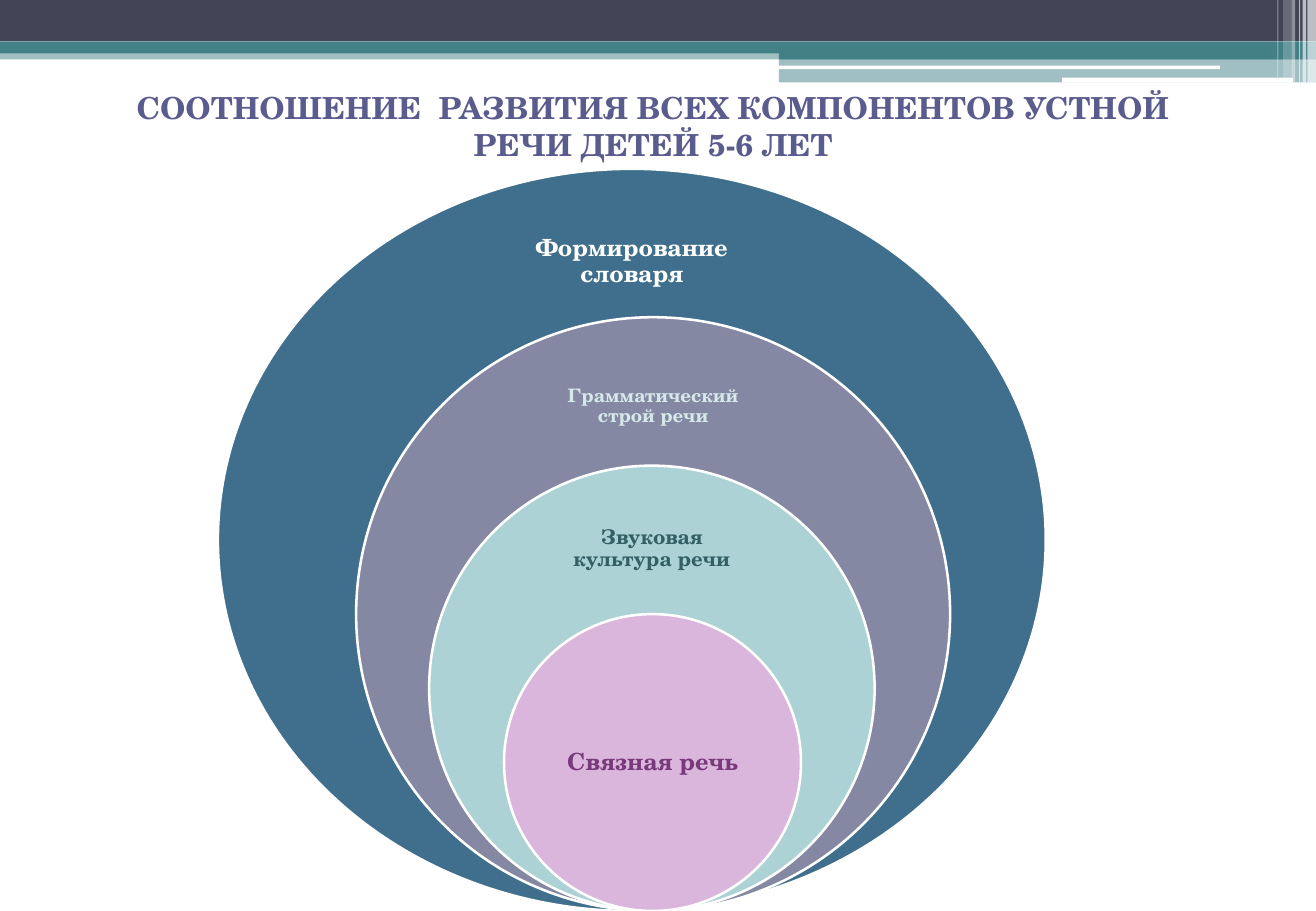
from lxml.etree import SubElement
from pptx import Presentation
from pptx.dml.color import RGBColor
from pptx.enum.shapes import MSO_SHAPE
from pptx.enum.text import MSO_ANCHOR, MSO_AUTO_SIZE, PP_ALIGN
from pptx.oxml.ns import qn
from pptx.util import Inches, Pt

WIDTH, HEIGHT = 10.83, 7.5
FONT = "TeX Gyre Schola"
DARK, TEAL, WHITE = "424456", "438086", "FFFFFF"

BANDS = [
    (0, 0.4, WIDTH, 0.09, TEAL, 50),
    (0, 0, WIDTH, 0.34, DARK, 100),
    (0, 0.34, WIDTH, 0.1, TEAL, 100),
    (6.41, 0.39, 4.42, 0.1, TEAL, 100),
    (6.41, 0.48, 4.42, 0.2, TEAL, 50),
]
ROUNDED_BARS = [(6.41, 0.54, 3.63, 0.03), (8.74, 0.64, 1.9, 0.04)]
STRIPES = [
    (10.76, 0.07, 0.68, 65),
    (10.72, 0.03, 0.68, 65),
    (10.69, 0.01, 0.68, 60),
    (10.63, 0.03, 0.68, 40),
    (10.56, 0.07, 0.64, 20),
    (10.51, 0.01, 0.64, 30),
]
RINGS = [
    dict(text="Формирование словаря", center=5.2, stretch=1.115, fill="406F8D",
         color=WHITE, size=14, label=(0.28, 0.05, 0.15)),
    dict(text="Грамматический строй речи", center=5.375, stretch=1, fill="8588A2",
         color="D6E9EA", size=11, label=(0.35, 0.06, 0.18)),
    dict(text="Звуковая культура речи", center=5.365, stretch=1, fill="ADD2D6",
         color="326065", size=12, label=(0.465, 0.075, 0.225)),
    dict(text="Связная речь", center=5.37, stretch=1, fill="DBB6DC",
         color="783A7A", size=14, label=(0.71, 0.25, 0.5)),
]


def rgb(value):
    """Turn a hex string into a colour."""
    return RGBColor.from_string(value)


def inches(box):
    """Convert left, top, width and height to slide lengths."""
    return [Inches(length) for length in box]


def add_figure(page, kind, box, fill, opacity=100, line=None):
    """Draw a filled preset shape, optionally outlined or translucent."""
    shape = page.shapes.add_shape(kind, *inches(box))
    shape.shadow.inherit = False
    shape.fill.solid()
    shape.fill.fore_color.rgb = rgb(fill)
    if opacity < 100:
        color = shape.fill._xPr.find(".//" + qn("a:srgbClr"))
        SubElement(color, qn("a:alpha"), val=str(opacity * 1000))
    if line:
        shape.line.color.rgb = rgb(line)
        shape.line.width = Pt(1.5)
    else:
        shape.line.fill.background()
    return shape


def write(shape, text, size, color, spacing=1.0, inset=(0.1, 0.05)):
    """Put one bold centred paragraph into a shape."""
    frame = shape.text_frame
    frame.word_wrap = True
    frame.auto_size = MSO_AUTO_SIZE.NONE
    frame.vertical_anchor = MSO_ANCHOR.MIDDLE
    frame.margin_left = frame.margin_right = Inches(inset[0])
    frame.margin_top = frame.margin_bottom = Inches(inset[1])
    para = frame.paragraphs[0]
    para.alignment = PP_ALIGN.CENTER
    para.line_spacing = spacing
    span = para.add_run()
    span.text = text
    span.font.name = FONT
    span.font.size = Pt(size)
    span.font.bold = True
    span.font.color.rgb = rgb(color)


def add_header(page):
    """Draw the bands, bars and stripes along the top edge."""
    for *box, fill, opacity in BANDS:
        add_figure(page, MSO_SHAPE.RECTANGLE, box, fill, opacity)
    for box in ROUNDED_BARS:
        add_figure(page, MSO_SHAPE.ROUNDED_RECTANGLE, box, WHITE)
    for left, width, height, opacity in STRIPES:
        add_figure(page, MSO_SHAPE.RECTANGLE, (left, 0, width, height), WHITE, opacity)


def add_ring(page, box, ring):
    """Draw one ellipse with its label placed by shares of its box."""
    left, top, width, height = box
    add_figure(page, MSO_SHAPE.OVAL, box, ring["fill"], line=WHITE)
    label_width, label_top, label_height = ring["label"]
    label_box = (left + width * (1 - label_width) / 2, top + height * label_top,
                 width * label_width, height * label_height)
    label = page.shapes.add_textbox(*inches(label_box))
    inset = ring["size"] / 128
    write(label, ring["text"], ring["size"], ring["color"], 0.9, (inset, inset))


def add_nested_rings(page, top, bottom):
    """Stack ellipses on a common base, each a fifth of the tallest smaller."""
    tallest = bottom - top
    for index, ring in enumerate(RINGS):
        height = tallest * (1 - index / 5)
        width = height * ring["stretch"]
        box = (ring["center"] - width / 2, bottom - height, width, height)
        add_ring(page, box, ring)


def add_title(page, box):
    """Place and fill the title placeholder."""
    title = page.shapes.title
    title.left, title.top, title.width, title.height = inches(box)
    write(title, "СООТНОШЕНИЕ  РАЗВИТИЯ ВСЕХ КОМПОНЕНТОВ УСТНОЙ РЕЧИ ДЕТЕЙ 5-6 ЛЕТ",
          18, "5B5C8E")


def main():
    """Build the slide and save it."""
    deck = Presentation()
    deck.slide_width, deck.slide_height = Inches(WIDTH), Inches(HEIGHT)
    page = deck.slides.add_slide(deck.slide_layouts[5])
    add_header(page)
    add_nested_rings(page, 1.39, HEIGHT)
    add_title(page, (0.69, 0.68, 9.37, 0.71))
    deck.save("out.pptx")


if __name__ == "__main__":
    main()
